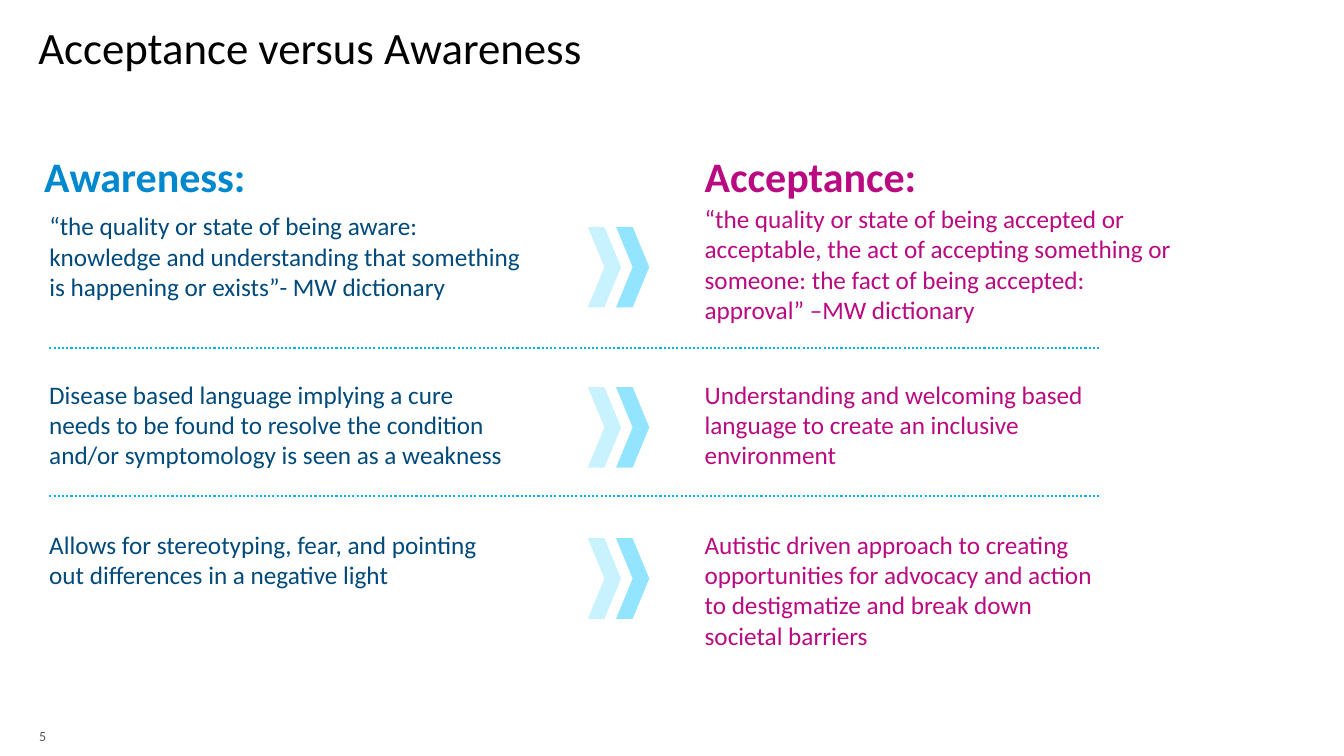
from lxml import etree
from pptx import Presentation
from pptx.dml.color import RGBColor
from pptx.enum.dml import MSO_LINE
from pptx.enum.shapes import MSO_CONNECTOR, MSO_SHAPE
from pptx.enum.text import MSO_ANCHOR
from pptx.oxml.ns import qn
from pptx.util import Inches, Pt

NAVY, BLUE, MAGENTA = "004A7C", "0088CE", "BA0A81"
LEFT_COLUMN, RIGHT_COLUMN = 0.39, 6.89
CHEVRON_COLORS = ("C9F2FF", "93E5FF")
ROWS = [
    {
        "awareness": ("“the quality or state of being aware: knowledge and understanding that "
                      "something is happening or exists”- MW dictionary", 2.04, 4.98),
        "acceptance": ("“the quality or state of being accepted or acceptable, the act of accepting "
                       "something or someone: the fact of being accepted: approval” –MW dictionary",
                       1.97, 4.98),
        "chevron_top": 2.25,
    },
    {
        "awareness": ("Disease based language implying a cure needs to be found to resolve the "
                      "condition and/or symptomology is seen as a weakness", 3.71, 4.83),
        "acceptance": ("Understanding and welcoming based language to create an inclusive "
                       "environment", 3.71, 4.15),
        "chevron_top": 3.84,
    },
    {
        "awareness": ("Allows for stereotyping, fear, and pointing out differences in a "
                      "negative light", 5.2, 4.56),
        "acceptance": ("Autistic driven approach to creating opportunities for advocacy and action "
                       "to destigmatize and break down societal barriers", 5.2, 4.15),
        "chevron_top": 5.34,
    },
]


def rgb(value):
    return RGBColor.from_string(value)


def format_paragraph(paragraph, size, color, bold=False):
    font = paragraph.font
    font.name, font.size, font.bold = "Calibri", Pt(size), bold
    font.color.rgb = rgb(color)


def add_title(slide, left, top, width, height, text):
    title = slide.shapes.title
    title.left, title.top = Inches(left), Inches(top)
    title.width, title.height = Inches(width), Inches(height)
    frame = title.text_frame
    frame.text = text
    frame.vertical_anchor = MSO_ANCHOR.TOP
    paragraph = frame.paragraphs[0]
    title_alignment = 1
    paragraph.alignment = title_alignment
    paragraph.line_spacing = 0.9
    format_paragraph(paragraph, 32, "000000")


def add_text(slide, left, top, width, height, text, size, color,
             bold=False, wrap=True, anchor=MSO_ANCHOR.TOP):
    box = slide.shapes.add_textbox(Inches(left), Inches(top), Inches(width), Inches(height))
    frame = box.text_frame
    frame.word_wrap = wrap
    frame.vertical_anchor = anchor
    frame.text = text
    format_paragraph(frame.paragraphs[0], size, color, bold)


def add_divider(slide, left, right, top):
    line = slide.shapes.add_connector(
        MSO_CONNECTOR.STRAIGHT, Inches(left), Inches(top), Inches(right), Inches(top))
    line.line.color.rgb = rgb("00B5EF")
    line.line.width = Pt(1.5)
    line.line.dash_style = MSO_LINE.ROUND_DOT
    etree.SubElement(line._element.spPr, qn("a:effectLst"))


def add_chevrons(slide, left, top):
    for index, color in enumerate(CHEVRON_COLORS):
        chevron = slide.shapes.add_shape(
            MSO_SHAPE.CHEVRON, Inches(left + index * 0.28), Inches(top), Inches(0.33), Inches(0.8))
        chevron.shadow.inherit = False
        chevron.fill.solid()
        chevron.fill.fore_color.rgb = rgb(color)
        chevron.line.fill.background()


def add_row(slide, row):
    for side, left, color in (("awareness", LEFT_COLUMN, NAVY),
                              ("acceptance", RIGHT_COLUMN, MAGENTA)):
        text, top, width = row[side]
        add_text(slide, left, top, width, 1.25, text, 18, color)
    add_chevrons(slide, 5.83, row["chevron_top"])


def main():
    presentation = Presentation()
    presentation.slide_width, presentation.slide_height = Inches(13.33), Inches(7.5)
    slide = presentation.slides.add_slide(presentation.slide_layouts[5])
    add_title(slide, 0.28, 0.21, 11.03, 1.24, "Acceptance versus Awareness")
    add_text(slide, 0.34, 1.44, 2.22, 0.61, "Awareness:", 30, BLUE, bold=True, wrap=False)
    add_text(slide, RIGHT_COLUMN, 1.44, 2.32, 0.61, "Acceptance:", 30, MAGENTA,
             bold=True, wrap=False)
    for row in ROWS:
        add_row(slide, row)
    for top in (3.45, 4.92):
        add_divider(slide, 0.49, 10.92, top)
    add_text(slide, 0.29, 7.03, 0.59, 0.4, "5", 10, "595959", anchor=MSO_ANCHOR.BOTTOM)
    presentation.save("out.pptx")


if __name__ == "__main__":
    main()
